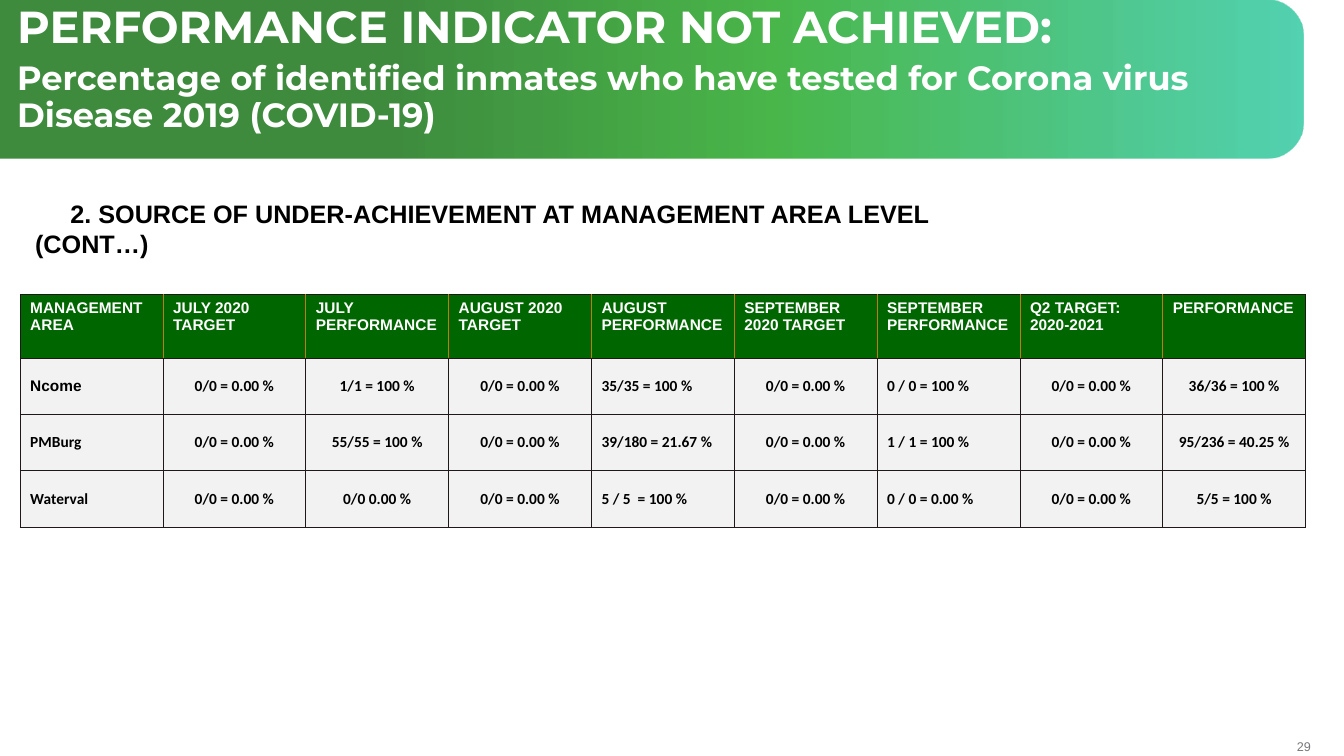
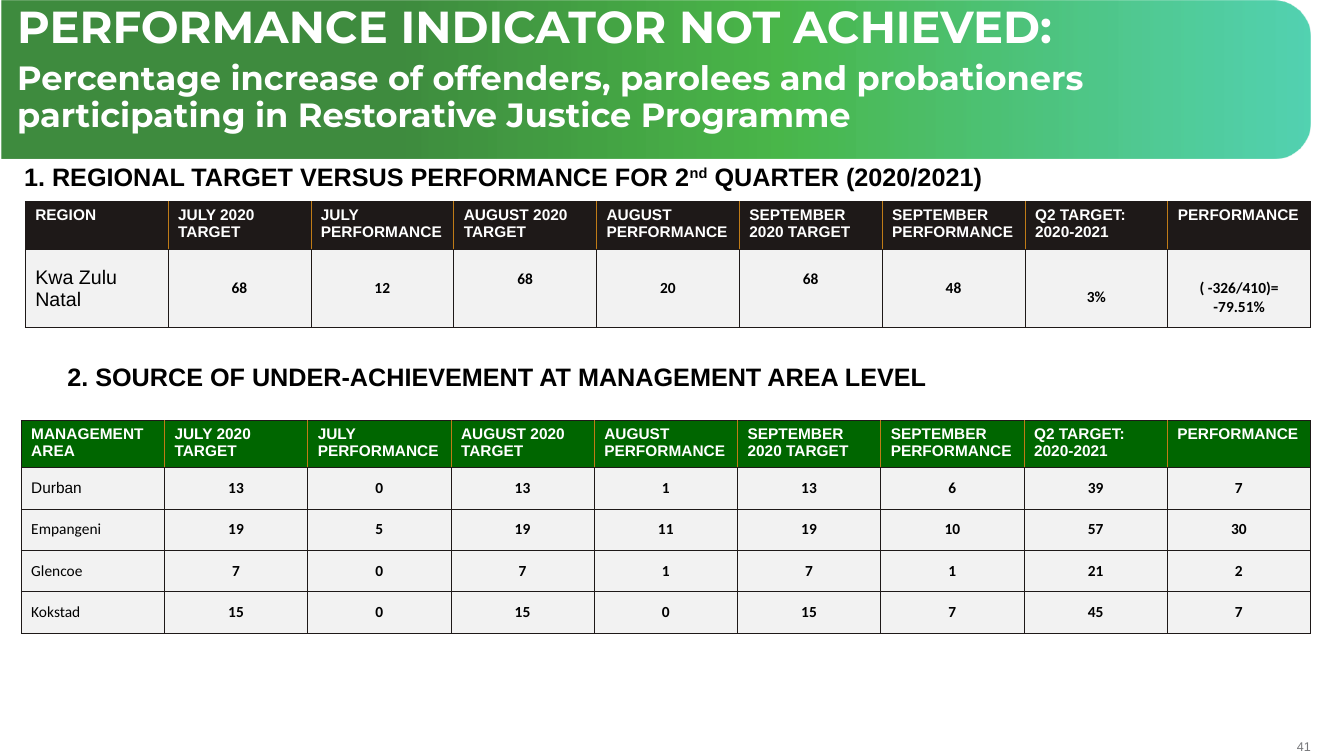
import pptx
import pptx.util
import pptx.dml.color
import pptx.enum.shapes
import pptx.enum.text
import pptx.oxml
import pptx.oxml.ns

Inches, Pt = pptx.util.Inches, pptx.util.Pt
ALIGN = pptx.enum.text.PP_ALIGN
ANCHOR = pptx.enum.text.MSO_ANCHOR

GREEN, BLACK, WHITE = "006600", "000000", "FFFFFF"
INK, ORANGE, PALE, GREY = "1E1918", "BF7B17", "F2F2F2", "77787B"
BAND_STOPS = [(30, GREEN, 75), (59, "009900", 71), (100, "00BC8D", 67)]
BAND_THICK = 1.57
LINE_SHIFT = 0.18  # height of one table text line

TITLE = "PERFORMANCE INDICATOR NOT ACHIEVED:"
MONTHS = ["JULY 2020 TARGET", "JULY PERFORMANCE", "AUGUST 2020 TARGET", "AUGUST PERFORMANCE",
          "SEPTEMBER 2020 TARGET", "SEPTEMBER PERFORMANCE", "Q2 TARGET: 2020-2021", "PERFORMANCE"]
ZERO = "0/0 = 0.00 %"

# Headings: left, top, width, height, first-line indent, [(text, superscript)]
# Tables: at = left, top, width; shifts = column: lines down (+) or up (-)
SLIDES = [
    dict(
        number="29", band=(5.68, -5.68, 12.93),
        subtitle="Percentage of identified inmates who have tested for Corona virus "
                 "Disease 2019 (COVID-19)",
        headings=[(0.25, 1.92, 9.75, 0.71, 0.35, [
            ("2. SOURCE OF UNDER-ACHIEVEMENT AT MANAGEMENT AREA LEVEL (CONT…)", False)])],
        tables=[dict(
            at=(0.2, 2.92, 12.75), heights=(0.63, 0.56), header="MANAGEMENT AREA",
            header_fill=GREEN, label_bold=True, left_columns=(0, 4, 6),
            rows=[
                ["Ncome", ZERO, "1/1 = 100 %", ZERO, "35/35 = 100 %", ZERO, "0 / 0 = 100 %",
                 ZERO, "36/36 = 100 %"],
                ["PMBurg", ZERO, "55/55 = 100 %", ZERO, "39/180 = 21.67 %", ZERO,
                 "1 / 1 = 100 %", ZERO, "95/236 = 40.25 %"],
                ["Waterval", ZERO, "0/0 0.00 %", ZERO, "5 / 5  = 100 %", ZERO,
                 "0 / 0 = 0.00 %", ZERO, "5/5 = 100 %"],
            ])],
    ),
    dict(
        number="41", band=(5.72, -5.7, 12.98),
        subtitle="Percentage increase of offenders, parolees and probationers "
                 "participating in Restorative Justice Programme",
        headings=[
            (0.14, 1.55, 9.76, 0.4, 0, [
                ("1. REGIONAL TARGET VERSUS PERFORMANCE FOR 2", False), ("nd", True),
                (" QUARTER (2020/2021)", False)]),
            (0.22, 3.54, 11, 0.4, 0.35, [
                ("2. SOURCE OF UNDER-ACHIEVEMENT AT MANAGEMENT AREA LEVEL", False)]),
        ],
        tables=[
            dict(at=(0.25, 2, 12.75), heights=(0.47, 0.78), header="REGION",
                 header_fill=INK, label_size=14, shifts={3: -1, 5: -1, 7: 1, 8: 1},
                 rows=[["Kwa Zulu Natal", "68", "12", "68", "20", "68", "48", "3%",
                        "( -326/410)=\n-79.51%"]]),
            dict(at=(0.21, 4.17, 12.79), heights=(0.47, 0.41), header="MANAGEMENT AREA",
                 header_fill=GREEN,
                 rows=[["Durban", "13", "0", "13", "1", "13", "6", "39", "7"],
                       ["Empangeni", "19", "5", "19", "11", "19", "10", "57", "30"],
                       ["Glencoe", "7", "0", "7", "1", "7", "1", "21", "2"],
                       ["Kokstad", "15", "0", "15", "0", "15", "7", "45", "7"]]),
        ],
    ),
]


def rgb(code):
    return pptx.dml.color.RGBColor.from_string(code)


def format_runs(p, font, size, color, bold=False, align=ALIGN.LEFT):
    p.alignment = align
    for r in p.runs:
        r.font.name, r.font.size, r.font.bold = font, Pt(size), bold
        r.font.color.rgb = rgb(color)


def xml(text):
    return pptx.oxml.parse_xml(text.replace(">", " " + pptx.oxml.ns.nsdecls("a") + ">", 1))


def add_band(s, left, top, length):
    """Lay the gradient band behind the title, rounded at its right end."""
    band = s.shapes.add_shape(pptx.enum.shapes.MSO_SHAPE.ROUND_2_SAME_RECTANGLE,
                              Inches(left), Inches(top), Inches(BAND_THICK), Inches(length))
    band.rotation = 90
    band.adjustments[0], band.adjustments[1] = 0.233, 0
    band.shadow.inherit = False
    band.line.fill.background()
    stops = "".join(
        f'<a:gs pos="{pos * 1000}"><a:srgbClr val="{color}">'
        f'<a:alpha val="{alpha * 1000}"/></a:srgbClr></a:gs>'
        for pos, color, alpha in BAND_STOPS)
    geometry = band._element.spPr.find(pptx.oxml.ns.qn("a:prstGeom"))
    geometry.addnext(xml(f'<a:gradFill rotWithShape="1"><a:gsLst>{stops}</a:gsLst>'
                         '<a:lin ang="16200000" scaled="0"/></a:gradFill>'))
    s.shapes.title._element.addprevious(band._element)


def set_title(s, subtitle):
    title = s.shapes.title
    title.left, title.top, title.width, title.height = map(Inches, (0.07, 0, 11.98, 0.57))
    tf = title.text_frame
    tf.text = TITLE + "\n" + subtitle
    tf.word_wrap = True
    tf.auto_size = pptx.enum.text.MSO_AUTO_SIZE.NONE
    tf.vertical_anchor = ANCHOR.TOP
    for p, size in zip(tf.paragraphs, (32, 24)):
        p.line_spacing, p.space_before, p.space_after = 0.9, Pt(0), Pt(6)
        format_runs(p, "Montserrat", size, WHITE, True)


def add_heading(s, left, top, width, height, indent, parts):
    tf = s.shapes.add_textbox(*map(Inches, (left, top, width, height))).text_frame
    tf.word_wrap = True
    p = tf.paragraphs[0]
    for text, superscript in parts:
        r = p.add_run()
        r.text = text
        if superscript:
            r._r.get_or_add_rPr().set("baseline", "30000")
    format_runs(p, "Arial", 18, BLACK, True)
    p._p.get_or_add_pPr().set("indent", str(Inches(indent)))


def add_number(s, number):
    tf = s.shapes.add_textbox(*map(Inches, (12.61, 7.33, 0.39, 0.15))).text_frame
    tf.margin_left = tf.margin_right = tf.margin_top = tf.margin_bottom = 0
    tf.vertical_anchor = ANCHOR.MIDDLE
    tf.word_wrap = True
    tf.text = number
    format_runs(tf.paragraphs[0], "Arial", 9, GREY, align=ALIGN.RIGHT)


def set_borders(cell, left, right):
    for side, color in zip("LRTB", (left, right, INK, INK)):
        cell._tc.get_or_add_tcPr().append(xml(
            f'<a:ln{side} w="{Pt(0.5)}"><a:solidFill><a:srgbClr val="{color}"/>'
            f'</a:solidFill></a:ln{side}>'))


def add_table(s, at, heights, header, header_fill, rows, label_bold=False, label_size=11,
              left_columns=(0,), shifts={}):
    grid = [[header] + MONTHS] + rows
    columns = len(grid[0])
    left, top, width = at
    height = heights[0] + heights[1] * len(rows)
    table = s.shapes.add_table(len(grid), columns, *map(Inches, (left, top, width, height))).table
    table.first_row = table.horz_banding = False
    for column in table.columns:
        column.width = Inches(width / columns)
    for i, texts in enumerate(grid):
        is_header = i == 0
        table.rows[i].height = Inches(heights[0 if is_header else 1])
        for j, text in enumerate(texts):
            cell = table.cell(i, j)
            cell.text = text
            inner = ORANGE if is_header else INK
            set_borders(cell, inner if j else INK, inner if j < columns - 1 else INK)
            cell.fill.solid()
            cell.fill.fore_color.rgb = rgb(header_fill if is_header else PALE)
            if is_header:
                style = ("Arial", 11, WHITE, True)
            elif j == 0:
                style = ("Arial" if i == 1 else "Calibri", label_size, BLACK, label_bold)
            else:
                style = ("Calibri", 11, BLACK, True)
            align = ALIGN.LEFT if is_header or j in left_columns else ALIGN.CENTER
            for p in cell.text_frame.paragraphs:
                format_runs(p, *style, align)
            if not is_header:
                cell.vertical_anchor = ANCHOR.MIDDLE
                shift = shifts.get(j, 0) * LINE_SHIFT
                cell.margin_top = Inches(0.05 + max(shift, 0))
                cell.margin_bottom = Inches(0.05 + max(-shift, 0))


def main():
    prs = pptx.Presentation()
    prs.slide_width, prs.slide_height = Inches(13.33), Inches(7.5)
    for content in SLIDES:
        s = prs.slides.add_slide(prs.slide_layouts[5])
        add_band(s, *content["band"])
        set_title(s, content["subtitle"])
        for heading in content["headings"]:
            add_heading(s, *heading)
        for table in content["tables"]:
            add_table(s, **table)
        add_number(s, content["number"])
    prs.save("out.pptx")


if __name__ == "__main__":
    main()
